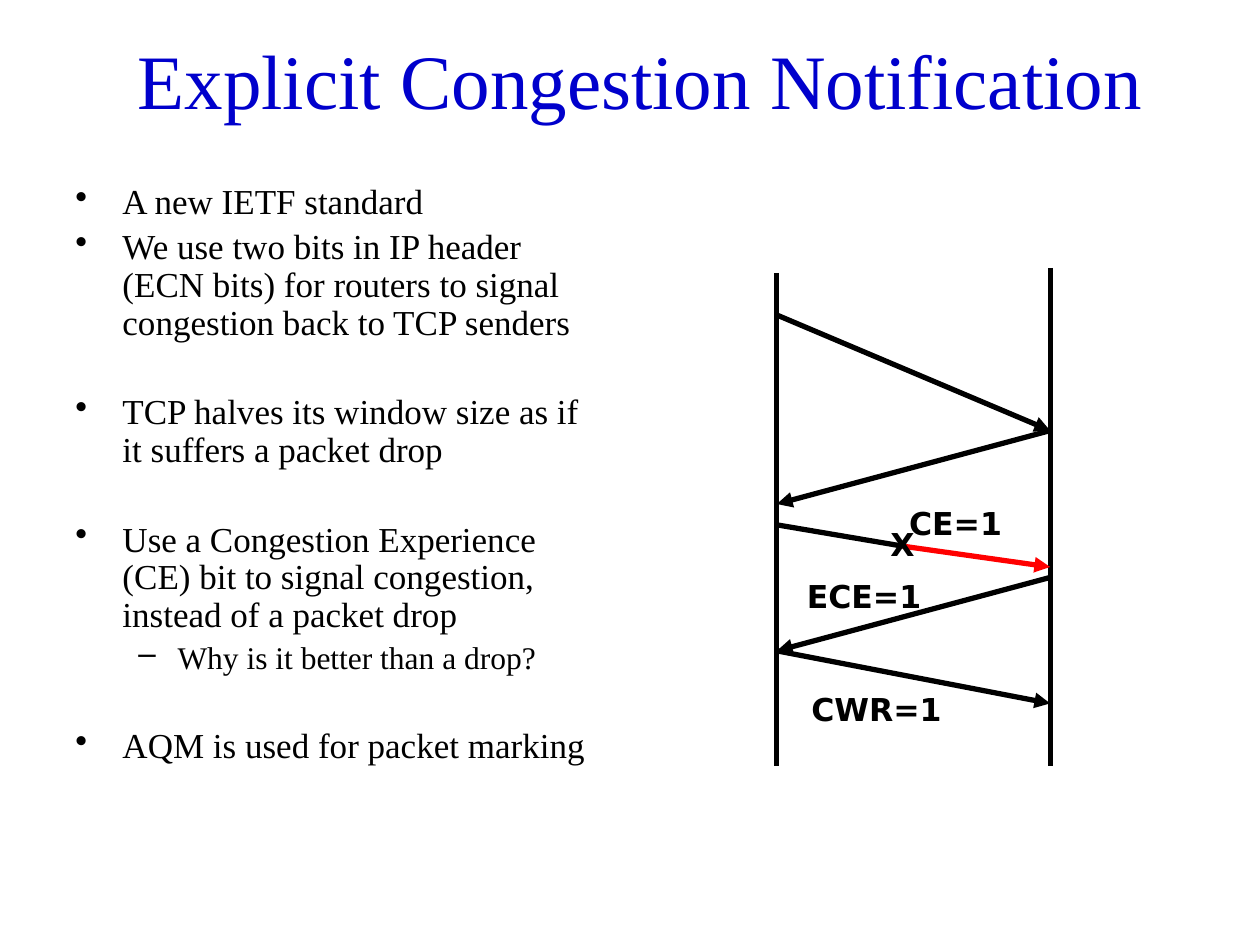
from pptx import Presentation
from pptx.util import Cm, Pt
from pptx.dml.color import RGBColor as Rgb
from pptx.enum.shapes import MSO_CONNECTOR as Conn
from pptx.enum.text import MSO_ANCHOR as Anchor, PP_ALIGN as Align
from pptx.oxml.ns import qn
from lxml.etree import SubElement as Sub

HUES = {"title": "0000CC", "ink": "000000", "mark": "FF0000"}
SERIF, SANS = "Times New Roman", "DejaVu Sans"


class Page:
    """Holds the style and the current slide."""

    def __init__(self, slide):
        self.slide = slide
        self.width = Pt(3)

    def style(self, para, size, face, hue="ink", bold=False):
        for run in para.runs:
            font = run.font
            font.size, font.name, font.bold = Pt(size), face, bold
            font.color.rgb = Rgb.from_string(HUES[hue])

    def box(self, left, top, wide, high, wrap=True):
        shape = self.slide.shapes.add_textbox(Cm(left), Cm(top), Cm(wide), Cm(high))
        shape.text_frame.word_wrap = wrap
        return shape.text_frame

    def title(self, text, *area):
        frame = self.box(*area)
        frame.text = text
        frame.vertical_anchor = Anchor.MIDDLE
        para = frame.paragraphs[0]
        para.alignment = Align.CENTER
        self.style(para, 44, SERIF, "title")

    def label(self, text, *area):
        frame = self.box(*area, wrap=False)
        frame.text = text
        para = frame.paragraphs[0]
        para.alignment = Align.CENTER
        self.style(para, 18, SANS, bold=True)

    def bullets(self, items, *area):
        frame = self.box(*area)
        for i, (level, gap, text) in enumerate(items):
            para = frame.add_paragraph() if i else frame.paragraphs[0]
            para.text = text
            para.level = level
            para.line_spacing = 0.9
            para.space_before = Pt(gap)
            size, left, hang, sign = [(20, 0.95, 0.95, "•"), (18, 2.06, 0.79, "–")][level]
            self.style(para, size, SERIF)
            props = para._p.get_or_add_pPr()
            props.set("marL", str(Cm(left)))
            props.set("indent", str(-Cm(hang)))
            Sub(props, qn("a:buChar"), char=sign)

    def line(self, start, end, hue="ink", arrow=True):
        ends = [Cm(n) for n in (*start, *end)]
        link = self.slide.shapes.add_connector(Conn.STRAIGHT, *ends)
        link.line.width = self.width
        link.line.color.rgb = Rgb.from_string(HUES[hue])
        if arrow:
            Sub(link.line._get_or_add_ln(), qn("a:tailEnd"), type="triangle")
        Sub(link._element.spPr, qn("a:effectLst"))


def main():
    deck = Presentation()
    deck.slide_width, deck.slide_height = Cm(25.4), Cm(19.05)
    page = Page(deck.slides.add_slide(deck.slide_layouts[6]))

    # Title and bullets: level, space before, text
    page.title("Explicit Congestion Notification", 0.85, 0, 24.13, 3.18)
    near, far = 4, 29.5
    page.bullets([
        (0, near, "A new IETF standard"),
        (0, near, "We use two bits in IP header (ECN bits) for routers to signal "
                  "congestion back to TCP senders"),
        (0, far, "TCP halves its window size as if it suffers a packet drop"),
        (0, far, "Use a Congestion Experience (CE) bit to signal congestion, "
                 "instead of a packet drop"),
        (1, near, "Why is it better than a drop?"),
        (0, far, "AQM is used for packet marking"),
    ], 1.27, 3.6, 11.18, 14.82)

    # Time lines of sender and receiver
    send, recv, foot = 15.66, 21.17, 15.45
    for x, top in ((send, 5.5), (recv, 5.4)):
        page.line((x, top), (x, foot), arrow=False)

    # Packets and replies
    for left, right, back in ((6.35, 8.68, False), (10.16, 8.68, True),
                              (13.12, 11.64, True), (13.12, 14.18, False)):
        ends = [(send, left), (recv, right)]
        page.line(*(reversed(ends) if back else ends))

    # Packet marked on its way
    mid = (18.2, 11.01)
    page.line((send, 10.58), mid, arrow=False)
    page.line(mid, (recv, 11.43), "mark")

    # Labels
    for text, left, top, wide in (("X", 17.7, 10.46, 0.99), ("CE=1", 18.06, 10.03, 2.41),
                                  ("ECE=1", 16, 11.51, 2.84), ("CWR=1", 16.08, 13.79, 3.18)):
        page.label(text, left, top, wide, 1.02)

    deck.save("out.pptx")


if __name__ == "__main__":
    main()
